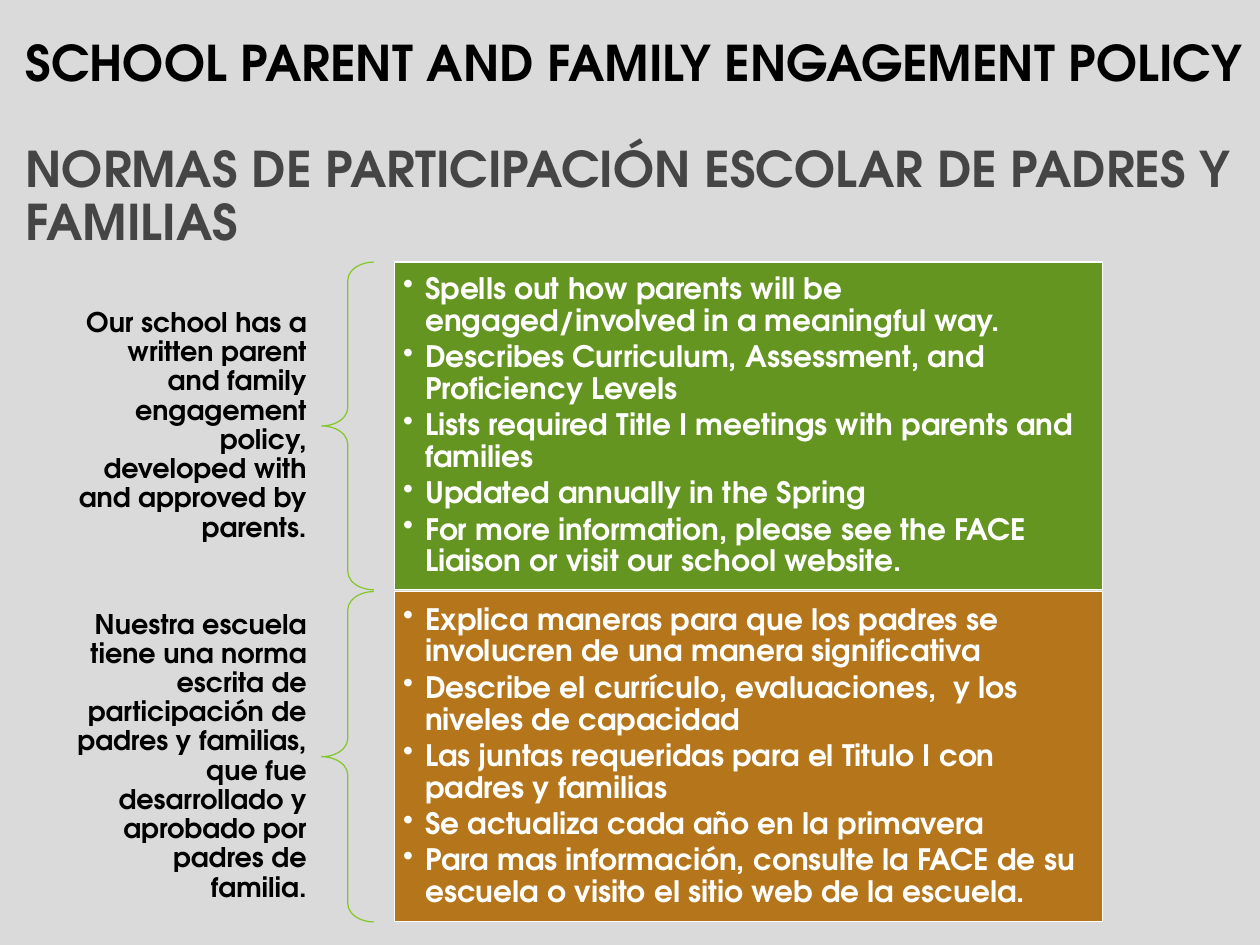
from dataclasses import dataclass

from lxml import etree
from pptx import Presentation
from pptx.dml.color import RGBColor
from pptx.enum.shapes import MSO_SHAPE
from pptx.enum.text import MSO_ANCHOR, PP_ALIGN
from pptx.oxml.ns import qn
from pptx.util import Inches, Pt

RECT = MSO_SHAPE.RECTANGLE
BRACE = MSO_SHAPE.LEFT_BRACE
MIDDLE = MSO_ANCHOR.MIDDLE
LEFT = PP_ALIGN.LEFT
RIGHT = PP_ALIGN.RIGHT

BACKGROUND = RGBColor(0xDA, 0xDA, 0xDA)
BLACK = RGBColor(0x00, 0x00, 0x00)
GRAY = RGBColor(0x45, 0x45, 0x45)
WHITE = RGBColor(0xFF, 0xFF, 0xFF)
LIME = RGBColor(0x84, 0xC7, 0x2A)
GREEN = RGBColor(0x63, 0x95, 0x20)
OCHRE = RGBColor(0xB5, 0x75, 0x1A)

FONT = "TeX Gyre Adventor"
LABEL_LEFT, LABEL_WIDTH = 0.69, 2.94
BRACE_LEFT, BRACE_WIDTH = 3.63, 0.59
PANEL_LEFT, PANEL_WIDTH = 4.45, 7.99


@dataclass
class Section:
    top: float
    height: float
    label_height: float
    color: RGBColor
    label: str
    points: list[str]


SECTIONS = [
    Section(
        2.96, 3.7, 2.82, GREEN,
        "Our school has a written parent and family engagement policy, "
        "developed with and approved by parents.",
        [
            "Spells out how parents will be engaged/involved in a meaningful way.",
            "Describes Curriculum, Assessment, and Proficiency Levels",
            "Lists required Title I meetings with parents and families",
            "Updated annually in the Spring",
            "For more information, please see the FACE Liaison or visit our school website.",
        ],
    ),
    Section(
        6.68, 3.73, 3.51, OCHRE,
        "Nuestra escuela tiene una norma escrita de participación de padres y familias, "
        "que fue desarrollado y aprobado por padres de familia.",
        [
            "Explica maneras para que los padres se involucren de una manera significativa",
            "Describe el currículo, evaluaciones,  y los niveles de capacidad",
            "Las juntas requeridas para el Titulo I con padres y familias",
            "Se actualiza cada año en la primavera",
            "Para mas información, consulte la FACE de su escuela o visito el sitio web de la escuela.",
        ],
    ),
]


def set_up_frame(tf, margin_x: float, margin_y: float) -> None:
    tf.word_wrap = True
    tf.vertical_anchor = MIDDLE
    tf.margin_left = tf.margin_right = Inches(margin_x)
    tf.margin_top = tf.margin_bottom = Inches(margin_y)


def add_text(tf, text: str, *, size: float, color: RGBColor, align=LEFT,
             before: float = 0, after: float = 0, bullet: bool = False) -> None:
    p = tf.paragraphs[0]
    if p.runs:
        p = tf.add_paragraph()
    p.alignment = align
    p.line_spacing = 0.9
    p.space_before = Pt(before)
    p.space_after = Pt(after)
    if bullet:
        ppr = p._p.get_or_add_pPr()
        ppr.set("marL", str(Inches(0.25)))
        ppr.set("indent", str(-Inches(0.25)))
        etree.SubElement(ppr, qn("a:buChar")).set("char", "•")
    r = p.add_run()
    r.text = text
    r.font.name = FONT
    r.font.size = Pt(size)
    r.font.bold = True
    r.font.color.rgb = color


def add_box(slide, left: float, top: float, width: float, height: float,
            margin_x: float, margin_y: float):
    sp = slide.shapes.add_textbox(Inches(left), Inches(top), Inches(width), Inches(height))
    set_up_frame(sp.text_frame, margin_x, margin_y)
    return sp.text_frame


def add_outlined(slide, kind, left: float, top: float, width: float, height: float,
                 line: RGBColor):
    sp = slide.shapes.add_shape(kind, Inches(left), Inches(top), Inches(width), Inches(height))
    sp.shadow.inherit = False
    sp.fill.background()
    sp.line.color.rgb = line
    sp.line.width = Pt(1)
    return sp


def add_section(slide, section: Section) -> None:
    label_top = section.top + (section.height - section.label_height) / 2
    tf = add_box(slide, LABEL_LEFT, label_top, LABEL_WIDTH, section.label_height, 0.17, 0.06)
    add_text(tf, section.label, size=22, color=BLACK, align=RIGHT, after=7.7)

    brace = add_outlined(slide, BRACE, BRACE_LEFT, section.top, BRACE_WIDTH,
                         section.height, LIME)
    brace.adjustments[0] = 0.35
    brace.adjustments[1] = 0.5

    panel = add_outlined(slide, RECT, PANEL_LEFT, section.top, PANEL_WIDTH,
                         section.height, WHITE)
    panel.fill.solid()
    panel.fill.fore_color.rgb = section.color
    set_up_frame(panel.text_frame, 0.1, 0.1)
    for point in section.points:
        add_text(panel.text_frame, point, size=24, color=WHITE, after=3.6, bullet=True)


def main() -> None:
    prs = Presentation()
    prs.slide_width = Inches(14.22)
    prs.slide_height = Inches(10.67)
    slide = prs.slides.add_slide(prs.slide_layouts[6])
    slide.background.fill.solid()
    slide.background.fill.fore_color.rgb = BACKGROUND

    title = add_box(slide, 0.19, 0.33, 14.03, 2.62, 0.1, 0.05)
    add_text(title, "SCHOOL PARENT AND FAMILY ENGAGEMENT POLICY", size=40, color=BLACK)
    add_text(title, "NORMAS DE PARTICIPACIÓN ESCOLAR DE PADRES Y FAMILIAS",
             size=40, color=GRAY, before=43)

    for section in SECTIONS:
        add_section(slide, section)
    prs.save("out.pptx")


if __name__ == "__main__":
    main()
